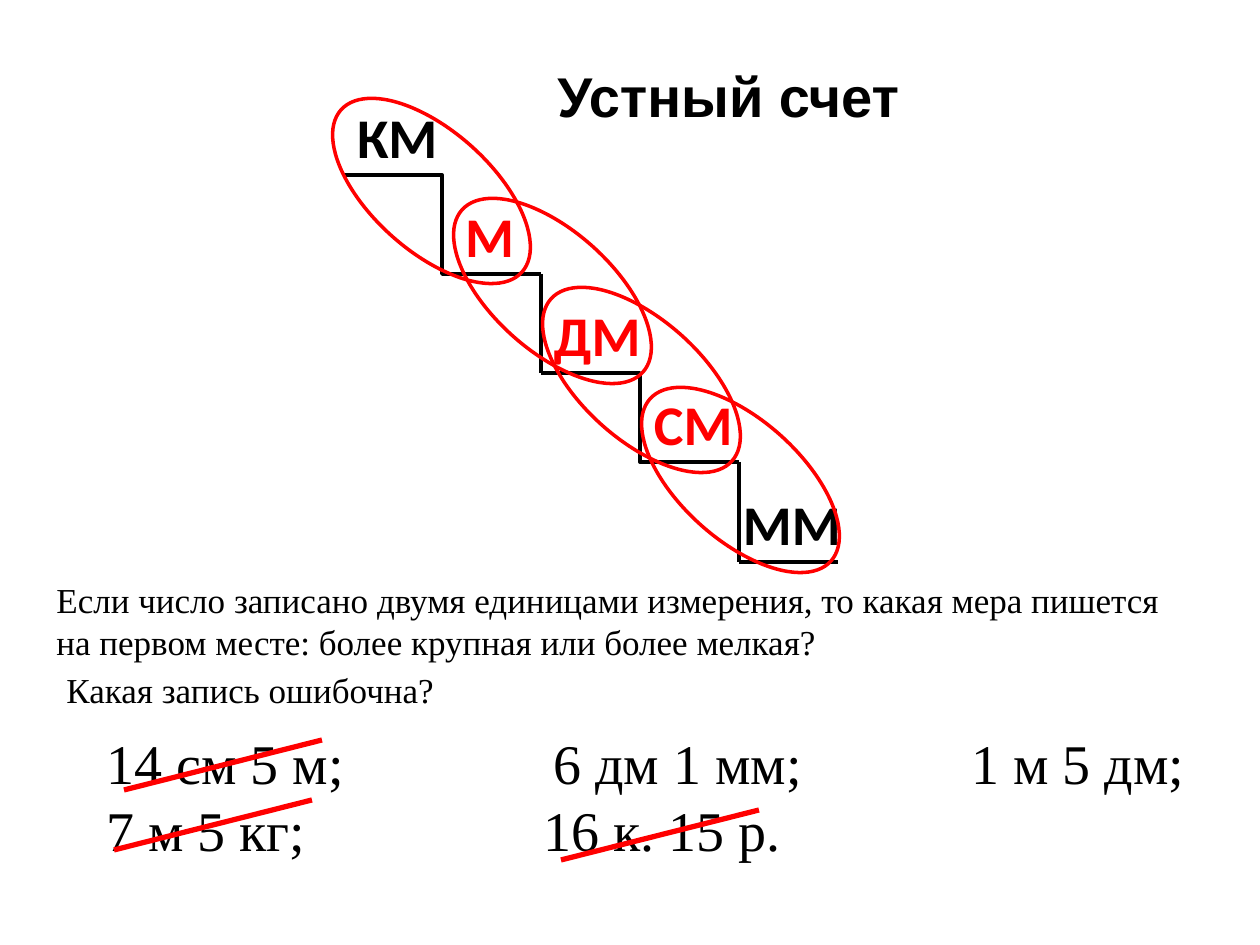
import pptx
import pptx.util
import pptx.dml.color
import pptx.enum.shapes
import pptx.enum.text
import pptx.oxml.ns
from lxml import etree

EMU_PER_PX = 914400 // 126
BLACK, RED = "000000", "FF0000"
SERIF = "Times New Roman"
ANCHOR = pptx.enum.text.MSO_ANCHOR
CONNECTOR = pptx.enum.shapes.MSO_CONNECTOR

# Content: places are left, top, width, height in px
TITLE = ("Устный счет", (282, 55, 893, 81))
UNITS = [  # unit, left, top, width, colour
    ("КМ", 333, 96, 118, BLACK),
    ("М", 441, 195, 118, RED),
    ("ДМ", 530, 294, 149, RED),
    ("СМ", 630, 383, 149, RED),
    ("ММ", 719, 483, 149, BLACK),
]
STAIRS = [  # kind, start x, start y, end x, end y
    (CONNECTOR.ELBOW, 343, 175, 541, 274),
    (CONNECTOR.STRAIGHT, 541, 274, 541, 373),
    (CONNECTOR.ELBOW, 541, 373, 739, 462),
    (CONNECTOR.STRAIGHT, 739, 462, 739, 562),
    (CONNECTOR.STRAIGHT, 739, 562, 838, 562),
]
QUESTION = ("Если число записано двумя единицами измерения, то какая мера "
            "пишется на первом месте: более крупная или более мелкая?")
ERROR_QUESTION = "Какая запись ошибочна?"
RECORDS = [  # records of one row, tab stops from the text edge
    (("14 см 5 м;", "6 дм 1 мм;", "1 м 5 дм;"), (447, 865)),
    (("7 м 5 кг;", "16 к. 15 р."), (437,)),
]
STRIKES = [(124, 790), (114, 850), (561, 860)]  # lower left ends
STRIKE_RUN, STRIKE_RISE = 198, 50
PAIR_OVALS = [(310, 131), (431, 231), (520, 320), (619, 420)]
OVAL_SIZE = (243, 120)


def px(*lengths):
    return [pptx.util.Emu(length * EMU_PER_PX) for length in lengths]


def rgb(colour):
    return pptx.dml.color.RGBColor.from_string(colour)


def fill_text(box, lines, font, size, colour=BLACK, bold=False, anchor=ANCHOR.MIDDLE):
    frame = box.text_frame
    frame.text = "\n".join(lines)
    frame.word_wrap = True
    frame.vertical_anchor = anchor
    frame.auto_size = pptx.enum.text.MSO_AUTO_SIZE.SHAPE_TO_FIT_TEXT
    for paragraph in frame.paragraphs:
        for run in paragraph.runs:
            run.font.name, run.font.size = font, pptx.util.Pt(size)
            run.font.bold, run.font.color.rgb = bold, rgb(colour)
    return frame


def add_text(slide, place, lines, font, size, **style):
    return fill_text(slide.shapes.add_textbox(*px(*place)), lines, font, size, **style)


def add_line(slide, kind, ends, colour, width):
    line = slide.shapes.add_connector(kind, *px(*ends))
    line.line.color.rgb = rgb(colour)
    line.line.width = pptx.util.Pt(width)
    properties = line._element.spPr
    etree.SubElement(properties, pptx.oxml.ns.qn("a:effectLst"))


def set_tabs(paragraph, stops):
    tabs = etree.SubElement(paragraph._p.get_or_add_pPr(), pptx.oxml.ns.qn("a:tabLst"))
    for stop in px(*stops):
        etree.SubElement(tabs, pptx.oxml.ns.qn("a:tab"), pos=str(int(stop)), algn="l")


def main():
    deck = pptx.Presentation()
    deck.slide_width, deck.slide_height = px(1260, 945)
    slide = deck.slides.add_slide(deck.slide_layouts[5])

    # Title
    heading, place = TITLE
    title = slide.shapes.title
    title.left, title.top, title.width, title.height = px(*place)
    frame = fill_text(title, [heading], "Arial", 32, bold=True, anchor=ANCHOR.TOP)
    frame.paragraphs[0].alignment = pptx.enum.text.PP_ALIGN.CENTER

    # Staircase of units
    for kind, *ends in STAIRS:
        add_line(slide, kind, ends, BLACK, 2)
    for unit, left, top, width, colour in UNITS:
        frame = add_text(slide, (left, top, width, 81), [unit], "Calibri", 32,
                         colour=colour, bold=True)
        frame.margin_left = px(24)[0]

    # Questions
    add_text(slide, (44, 572, 1171, 97), [QUESTION], SERIF, 20)
    frame = add_text(slide, (54, 662, 396, 55), [ERROR_QUESTION], SERIF, 20,
                     anchor=ANCHOR.TOP)
    frame.word_wrap = False

    # Records in tabbed rows, the wrong ones struck out
    rows = ["\t".join(records) for records, stops in RECORDS]
    frame = add_text(slide, (94, 721, 1131, 149), rows, SERIF, 32)
    for paragraph, (records, stops) in zip(frame.paragraphs, RECORDS):
        set_tabs(paragraph, stops)
    for x, y in STRIKES:
        add_line(slide, CONNECTOR.STRAIGHT,
                 (x, y, x + STRIKE_RUN, y - STRIKE_RISE), RED, 3)

    # Ovals around neighbouring units
    for corner in PAIR_OVALS:
        oval = slide.shapes.add_shape(pptx.enum.shapes.MSO_SHAPE.OVAL,
                                      *px(*corner, *OVAL_SIZE))
        oval.rotation = 41.9
        oval.shadow.inherit = False
        oval.fill.background()
        oval.line.color.rgb = rgb(RED)
        oval.line.width = pptx.util.Pt(2)

    deck.save("out.pptx")


if __name__ == "__main__":
    main()
